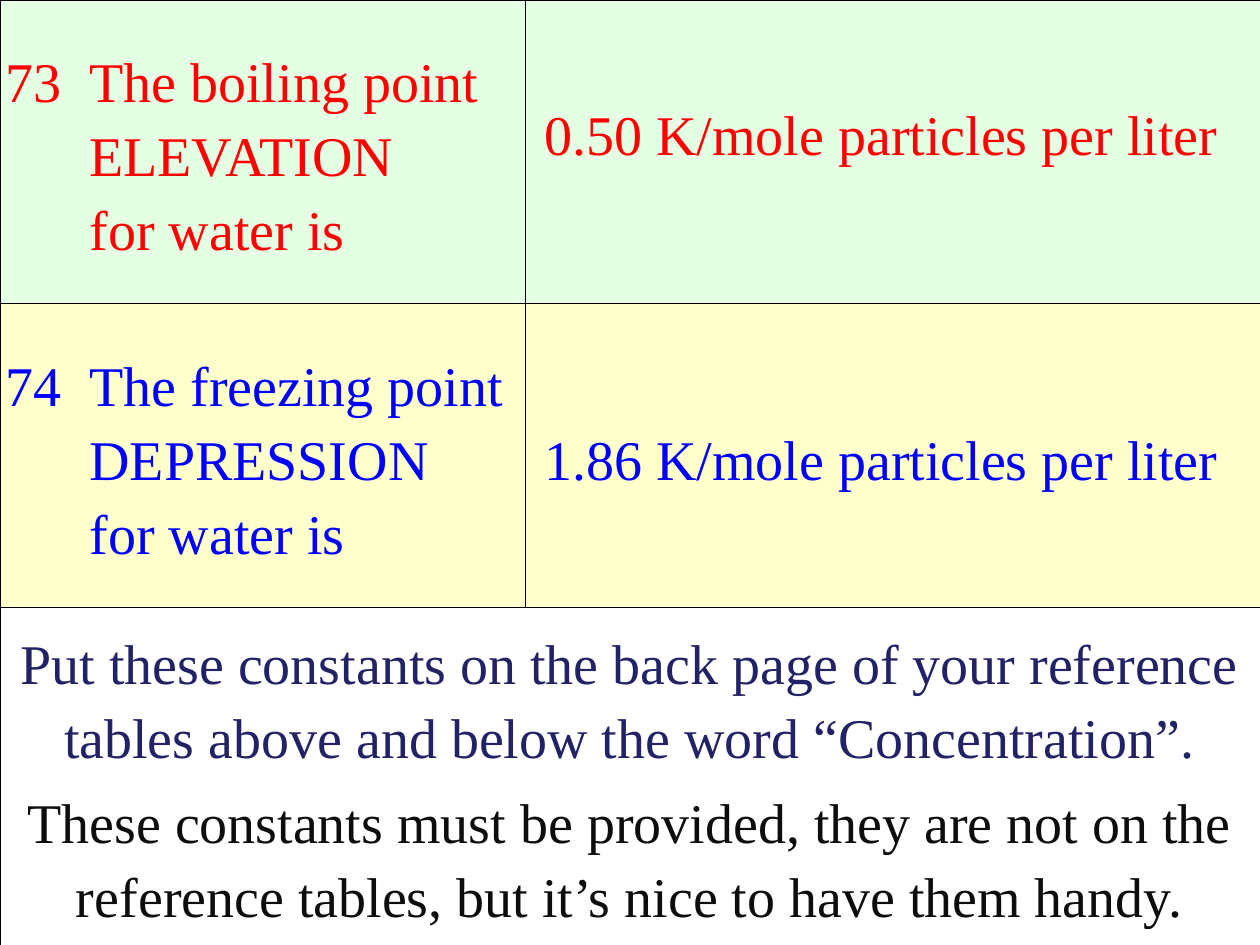
import pptx
import pptx.dml.color
import pptx.enum.text
import pptx.oxml.ns
import pptx.util
from lxml import etree

Inches = pptx.util.Inches
Pt = pptx.util.Pt
PP_ALIGN = pptx.enum.text.PP_ALIGN

COLORS = {
    "boiling": "FF0000",
    "boiling_fill": "E5FFE5",
    "freezing": "0000FF",
    "freezing_fill": "FFFFCC",
    "instruction": "222267",
    "remark": "0D0D0D",
    "border": "000000",
}

CONSTANTS = [
    ("73\tThe boiling point\vELEVATION\vfor water is",
     "0.50 K/mole particles per liter", "boiling", 0.38),
    ("74\tThe freezing point\vDEPRESSION\vfor water is",
     "1.86 K/mole particles per liter", "freezing", 0.04),
]
NOTES = [
    ("Put these constants on the back page of your reference tables "
     "above and below the word “Concentration”.", "instruction"),
    ("These constants must be provided, they are not on the reference "
     "tables, but it’s nice to have them handy.", "remark"),
]


def rgb(name):
    """Return the named colour."""
    return pptx.dml.color.RGBColor.from_string(COLORS[name])


def write(paragraph, text, color, align=PP_ALIGN.LEFT, margin=0, hanging=0):
    """Put formatted text in a paragraph, with indents in inches."""
    paragraph.text = text
    paragraph.alignment = align
    paragraph.line_spacing = 1.19
    paragraph.space_after = Pt(6)
    properties = paragraph._p.get_or_add_pPr()
    properties.set("marL", str(Inches(margin)))
    properties.set("indent", str(Inches(-hanging)))
    for run in paragraph.runs:
        run.font.name = "Times New Roman"
        run.font.size = Pt(32)
        run.font.color.rgb = rgb(color)


def style_cell(cell, fill=None, bottom=0.04):
    """Give a cell its margins, thin borders and fill."""
    cell.vertical_anchor = pptx.enum.text.MSO_ANCHOR.MIDDLE
    cell.margin_left = cell.margin_right = cell.margin_top = Inches(0.04)
    cell.margin_bottom = Inches(bottom)
    qn = pptx.oxml.ns.qn
    properties = cell._tc.get_or_add_tcPr()
    for side in ("lnL", "lnR", "lnT", "lnB"):
        line = etree.SubElement(properties, qn("a:" + side), w=str(Pt(0.25)))
        solid = etree.SubElement(line, qn("a:solidFill"))
        etree.SubElement(solid, qn("a:srgbClr"), val=COLORS["border"])
    if fill:
        cell.fill.solid()
        cell.fill.fore_color.rgb = rgb(fill)
    else:
        cell.fill.background()


def fill_constant_row(table, row, question, answer, color, bottom):
    """Write one numbered question and its constant."""
    question_cell, answer_cell = table.cell(row, 0), table.cell(row, 1)
    style_cell(question_cell, color + "_fill")
    style_cell(answer_cell, color + "_fill", bottom)
    write(question_cell.text_frame.paragraphs[0], question, color,
          margin=0.67, hanging=0.67)
    write(answer_cell.text_frame.paragraphs[0], answer, color, margin=0.11)


def fill_notes_row(table, row):
    """Write the centred notes across both columns."""
    notes_cell = table.cell(row, 0)
    notes_cell.merge(table.cell(row, 1))
    for column in range(2):
        style_cell(table.cell(row, column))
    frame = notes_cell.text_frame
    for index, (note, color) in enumerate(NOTES):
        paragraph = frame.add_paragraph() if index else frame.paragraphs[0]
        write(paragraph, note, color, align=PP_ALIGN.CENTER)


def add_constants_table(slide, left, top, width, height):
    """Place the table of constants in the given box."""
    table = slide.shapes.add_table(3, 2, left, top, width, height).table
    table.first_row = table.horz_banding = False
    table.columns[0].width = Inches(4.17)
    table.columns[1].width = width - Inches(4.17)
    for row in range(2):
        table.rows[row].height = Inches(2.41)
    table.rows[2].height = height - 2 * Inches(2.41)
    for row, constant in enumerate(CONSTANTS):
        fill_constant_row(table, row, *constant)
    fill_notes_row(table, 2)


def main():
    """Build and save the slide."""
    deck = pptx.Presentation()
    deck.slide_width, deck.slide_height = Inches(10), Inches(7.5)
    slide = deck.slides.add_slide(deck.slide_layouts[6])
    add_constants_table(slide, Inches(0), Inches(0),
                        deck.slide_width, deck.slide_height)
    deck.save("out.pptx")


if __name__ == "__main__":
    main()
